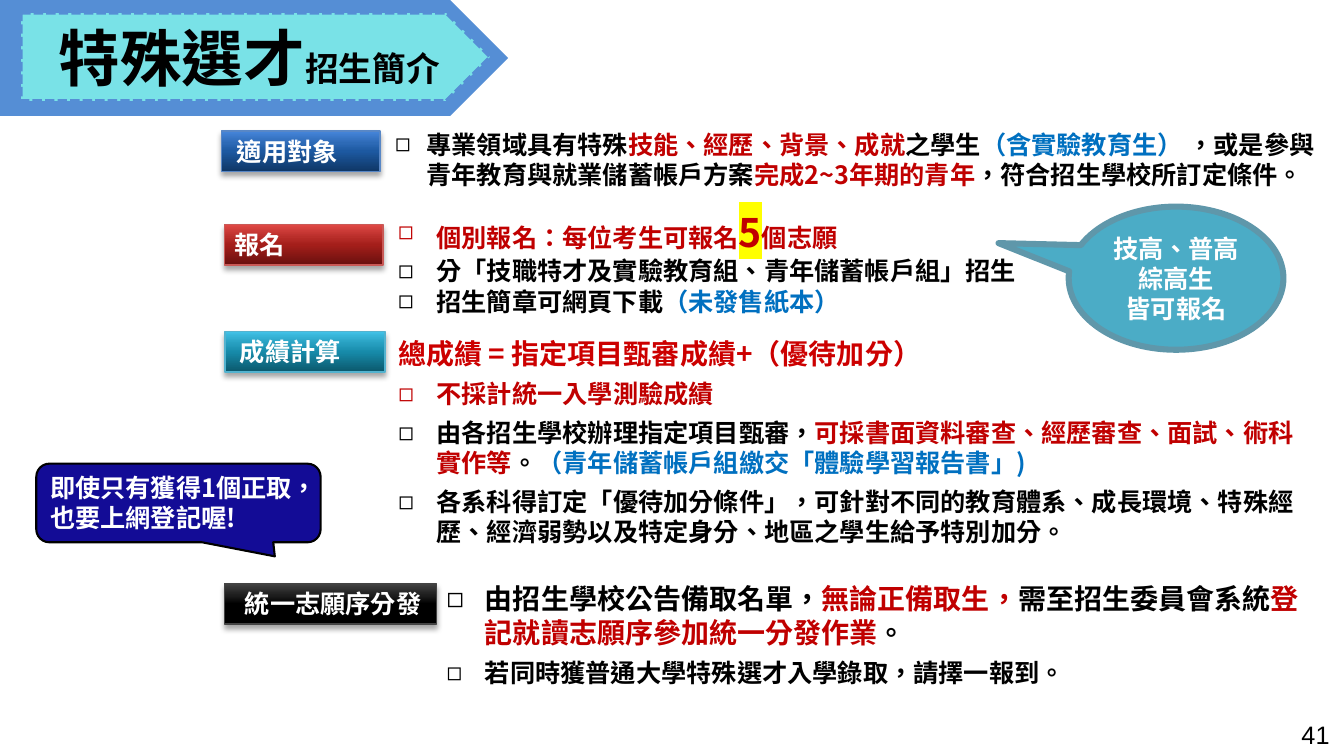
import pptx
import pptx.util
import pptx.dml.color
import pptx.enum.dml
import pptx.enum.lang
import pptx.enum.shapes
import pptx.enum.text
import pptx.oxml
import pptx.oxml.ns
import lxml.etree

Inches = pptx.util.Inches
Pt = pptx.util.Pt
RGBColor = pptx.dml.color.RGBColor
SHAPE = pptx.enum.shapes.MSO_SHAPE
ANCHOR = pptx.enum.text.MSO_ANCHOR
ALIGN = pptx.enum.text.PP_ALIGN
qn = pptx.oxml.ns.qn

CJK = "Noto Sans CJK SC"
BLACK = RGBColor(0x00, 0x00, 0x00)
WHITE = RGBColor(0xFF, 0xFF, 0xFF)
RED = RGBColor(0xC0, 0x00, 0x00)
FORMULA_RED = RGBColor(0xCC, 0x00, 0x00)
BLUE = RGBColor(0x00, 0x70, 0xC0)
YELLOW = RGBColor(0xFF, 0xFF, 0x00)
RIBBON = RGBColor(0x55, 0x8E, 0xD5)
RIBBON_INNER = RGBColor(0x79, 0xE2, 0xE7)
NAVY = RGBColor(0x13, 0x0C, 0x96)
TEAL = RGBColor(0x4B, 0xAC, 0xC6)
TEAL_EDGE = RGBColor(0x5F, 0x97, 0xAA)

LABELS = [
    ("適用對象", 2.2, 1.3, 1.57, 0.15, "5887C6", ("0F3766", "1D59A1", "2D6AB6", "4786DB")),
    ("報名", 2.23, 2.23, 1.57, 0.1, "C95956", ("68100E", "A41E1A", "B92E2A", "DF4845")),
    ("成績計算", 2.23, 3.29, 1.59, 0.15, "54B3CF", ("0B586C", "178BAA", "279FC0", "41C1E6")),
    ("統一志願序分發", 2.23, 5.79, 2.1, 0.2, "444444", ("000000", "000000", "1D1D1D", "424242")),
]
GRADIENT_STOPS = (0, 50, 70, 100)


def sub(parent, tag, **attributes):
    return lxml.etree.SubElement(parent, qn(tag), attributes)


def write(paragraph, text, size=18, color=BLACK, bold=True, font=CJK, highlight=None):
    run = paragraph.add_run()
    run.text = text
    run.font.size = Pt(size)
    run.font.bold = bold
    run.font.language_id = pptx.enum.lang.MSO_LANGUAGE_ID.TRADITIONAL_CHINESE
    run.font.color.rgb = color
    properties = run.font._element
    if highlight is not None:
        sub(sub(properties, "a:highlight"), "a:srgbClr", val=str(highlight))
    run.font.name = font
    sub(properties, "a:ea", typeface=font)


def format_paragraph(paragraph, indent=0, hanging=0, before=0, align=ALIGN.LEFT):
    paragraph.alignment = align
    paragraph.line_spacing = 1.0
    paragraph.space_before = Pt(before)
    paragraph.space_after = Pt(0)
    properties = paragraph._p.get_or_add_pPr()
    properties.set("marL", str(Inches(indent)))
    properties.set("indent", str(Inches(-hanging)))
    if hanging:
        sub(properties, "a:buFont", typeface="Arial")
        sub(properties, "a:buChar", char="◻")
    else:
        sub(properties, "a:buNone")


def fill_text(shape, paragraphs, anchor=ANCHOR.TOP, left=0.1, right=0.1):
    frame = shape.text_frame
    frame.word_wrap = True
    frame.auto_size = pptx.enum.text.MSO_AUTO_SIZE.NONE
    frame.vertical_anchor = anchor
    frame.margin_left, frame.margin_right = Inches(left), Inches(right)
    frame.margin_top = frame.margin_bottom = Inches(0.05)
    for number, (layout, runs) in enumerate(paragraphs):
        paragraph = frame.paragraphs[0] if number == 0 else frame.add_paragraph()
        format_paragraph(paragraph, **layout)
        for text, style in runs:
            write(paragraph, text, **style)


def place(shape, left, top, width, height):
    shape.left, shape.top = Inches(left), Inches(top)
    shape.width, shape.height = Inches(width), Inches(height)
    return shape


def add_box(slide, kind, box, fill=None, line=None, weight=1, adjustments=()):
    shape = slide.shapes.add_shape(kind, *map(Inches, box))
    shape.shadow.inherit = False
    if fill is not None:
        shape.fill.solid()
        shape.fill.fore_color.rgb = fill
    if line is None:
        shape.line.fill.background()
    else:
        shape.line.color.rgb = line
        shape.line.width = Pt(weight)
    for index, value in enumerate(adjustments):
        shape.adjustments[index] = value
    return shape


def add_label(slide, text, left, top, width, inset, edge, shades):
    label = add_box(slide, SHAPE.RECTANGLE, (left, top, width, 0.4), line=RGBColor.from_string(edge))
    label.fill.gradient()
    label.fill.gradient_angle = 90
    stops = label._element.spPr.find(".//" + qn("a:gsLst"))
    for stop in list(stops):
        stops.remove(stop)
    for position, shade in zip(GRADIENT_STOPS, shades):
        sub(sub(stops, "a:gs", pos=str(position * 1000)), "a:srgbClr", val=shade)
    effects = label._element.spPr.find(qn("a:effectLst"))
    shadow = sub(effects, "a:outerShdw", blurRad=str(Pt(4)), dist=str(Pt(3)), dir="5400000", rotWithShape="0")
    sub(sub(shadow, "a:srgbClr", val="000000"), "a:alpha", val="35000")
    fill_text(label, [({}, [(text, dict(color=WHITE))])], left=inset, right=0)


def add_title(slide):
    add_box(slide, SHAPE.PENTAGON, (0, 0, 5.04, 1.15), RIBBON)
    inner = add_box(slide, SHAPE.PENTAGON, (0.21, 0.13, 4.65, 0.87), RIBBON_INNER, RIBBON, 2.25)
    inner.line.dash_style = pptx.enum.dml.MSO_LINE.SQUARE_DOT
    title = place(slide.shapes.title, 0.21, 0.13, 4.65, 0.87)
    slide.shapes._spTree.append(title._element)
    fill_text(title, [({}, [("特殊選才", dict(size=44)), ("招生簡介", dict(size=24))])],
              anchor=ANCHOR.MIDDLE, left=0.37, right=0)


def add_lists(slide):
    red, blue = dict(color=RED), dict(color=BLUE)
    bullet = dict(indent=0.38, hanging=0.38)
    spaced = dict(bullet, before=6)
    deep = dict(indent=0.86, hanging=0.38)
    large, large_red = dict(size=20), dict(size=20, color=RED)

    eligibility = place(slide.placeholders[1], 3.82, 1.23, 9.52, 0.73)
    fill_text(eligibility, [(dict(indent=0.31, hanging=0.31), [
        ("專業領域具有特殊", {}), ("技能、經歷、背景、成就", red), ("之學生", {}),
        ("（含實驗教育生） ", blue), ("，或是參與青年教育與就業儲蓄帳戶方案", {}),
        ("完成2~3年期的青年", red), ("，符合招生學校所訂定條件。", {})])])

    scoring = place(slide.placeholders[2], 3.85, 3.29, 9.19, 3.92)
    fill_text(scoring, [
        ({}, [("總成績 = 指定項目甄審成績+（優待加分）", dict(size=20, color=FORMULA_RED))]),
        (spaced, [("不採計統一入學測驗成績", red)]),
        (spaced, [("由各招生學校辦理指定項目甄審，", {}),
                  ("可採書面資料審查、經歷審查、面試、術科實作等", red), ("。", {}),
                  ("（青年儲蓄帳戶組繳交「體驗學習報告書」)", blue)]),
        (spaced, [("各系科得訂定「優待加分條件」，可針對不同的教育體系、成長環境、特殊經歷、"
                   "經濟弱勢以及特定身分、地區之學生給予特別加分。", {})]),
        (dict(deep, before=25), [("由招生學校公告備取名單，", large), ("無論正備取生，", large_red),
                                 ("需至招生委員會系統", large),
                                 ("登記就讀志願序參加統一分發作業", large_red), ("。", large)]),
        (dict(deep, before=6), [("若同時獲普通大學特殊選才入學錄取，請擇一報到。", {})])])

    signup = slide.shapes.add_textbox(*map(Inches, (3.85, 2.02, 9.19, 1.18)))
    fill_text(signup, [
        (bullet, [("個別報名：每位考生可報名", red),
                  ("5", dict(size=28, color=RED, highlight=YELLOW)), ("個志願", red)]),
        (bullet, [("分「技職特才及實驗教育組、青年儲蓄帳戶組」招生", {})]),
        (bullet, [("招生簡章可網頁下載", {}), ("（未發售紙本）", blue)])])


def add_callouts(slide):
    white = dict(color=WHITE)
    reminder = add_box(slide, SHAPE.ROUNDED_RECTANGULAR_CALLOUT, (0.36, 4.6, 2.82, 0.78),
                       NAVY, BLACK, 1.5, (0.339, 0.679, 0.167))
    fill_text(reminder, [({}, [("即使只有獲得1個正取，也要上網登記喔!", white)])], right=0.2)
    applicants = add_box(slide, SHAPE.OVAL_CALLOUT, (10.6, 2.05, 2.13, 1.42),
                         TEAL, TEAL_EDGE, 4.33, (-0.827, -0.245))
    fill_text(applicants, [(dict(align=ALIGN.CENTER), [(line, white)])
                           for line in ("技高、普高", "綜高生", "皆可報名")], anchor=ANCHOR.MIDDLE)


def main():
    deck = pptx.Presentation()
    deck.slide_width, deck.slide_height = Inches(13.33), Inches(7.5)
    slide = deck.slides.add_slide(deck.slide_layouts[3])
    add_title(slide)
    for label in LABELS:
        add_label(slide, *label)
    add_lists(slide)
    add_callouts(slide)
    page_number = slide.shapes.add_textbox(*map(Inches, (12.81, 7.09, 0.52, 0.4)))
    fill_text(page_number, [({}, [("41", dict(bold=False, font="Arial"))])], right=0)
    deck.save("out.pptx")


if __name__ == "__main__":
    main()
